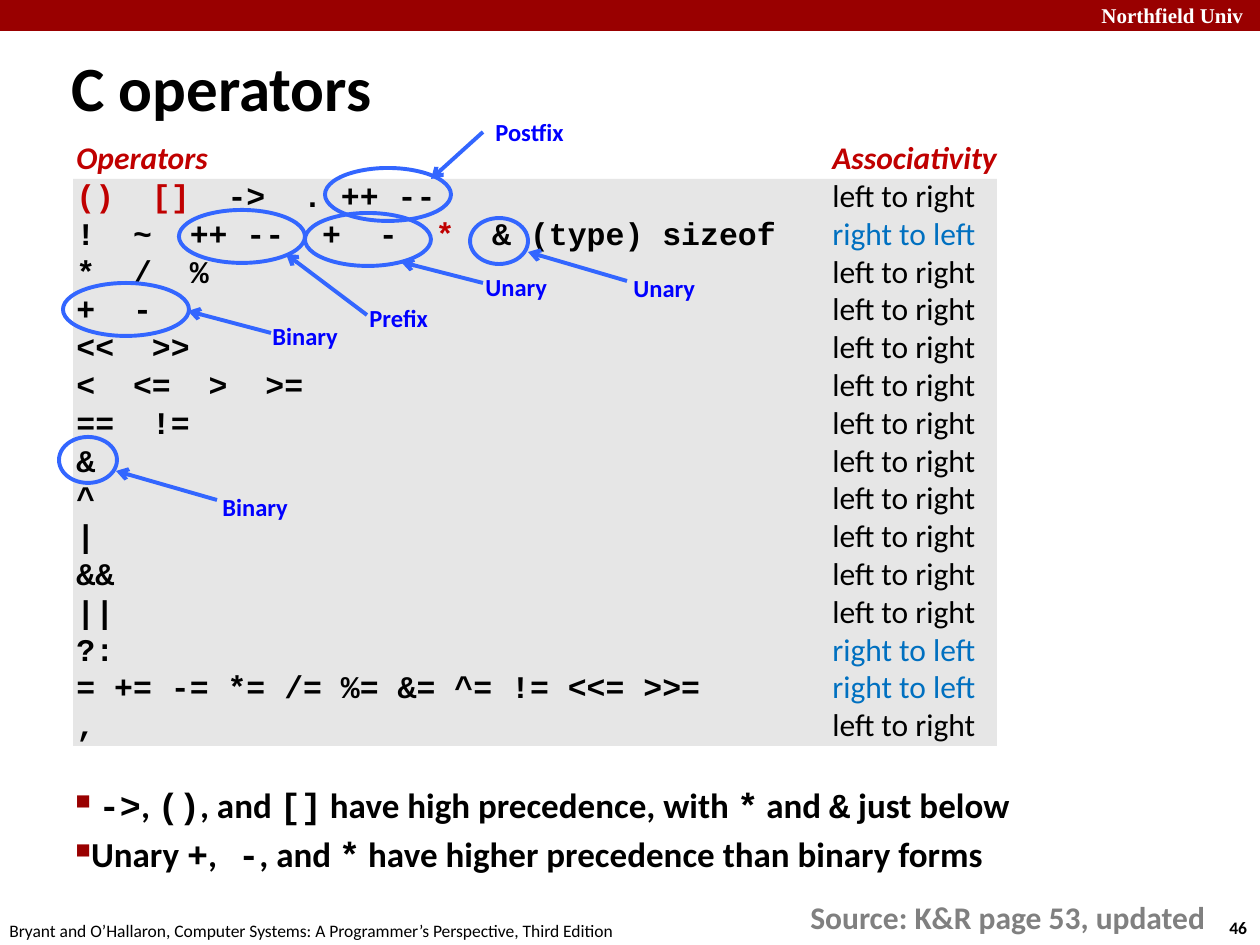
from lxml import etree
from pptx import Presentation
from pptx.dml.color import RGBColor
from pptx.enum.shapes import MSO_CONNECTOR as Connector, MSO_SHAPE as Shape
from pptx.enum.text import MSO_ANCHOR as Anchor
from pptx.oxml import parse_xml
from pptx.oxml.ns import nsdecls, qn
from pptx.util import Emu, Pt

PX = 914400 / 126  # EMU per pixel
SANS, MONO, SERIF = "Calibri", "Courier New", "Times New Roman"
COLORS = {
    "banner": "990000", "white": "FFFFFF", "black": "000000", "panel": "E6E6E6",
    "heading": "C00000", "right": "0070C0", "mark": "3366FF", "label": "0000FF",
    "source": "808080",
}
LEFT, RIGHT = "left to right", "right to left"
# Each operator row: (text, colour) pieces, then the associativity
OPERATORS = [
    ([("()  []  ", "heading"), ("->  . ++ --", "black")], LEFT),
    ([("!  ~  ++ --  +  -  ", "black"), ("*  ", "heading"),
      ("& (type) sizeof", "black")], RIGHT),
] + [([(text, "black")], direction) for text, direction in [
    ("*  /  %", LEFT), ("+  -", LEFT), ("<<  >>", LEFT), ("<  <=  >  >=", LEFT),
    ("==  !=", LEFT), ("&", LEFT), ("^", LEFT), ("|", LEFT), ("&&", LEFT),
    ("||", LEFT), ("?:", RIGHT), ("= += -= *= /= %= &= ^= != <<= >>=", RIGHT),
    (",", LEFT),
]]
# Pieces alternate between sans and monospaced
NOTES = [
    [" ", "->", ", ", "()", ", and ", "[]", " have high precedence, with ", "*",
     " and ", "&", " just below"],
    ["Unary ", "+", ",", " -", ", and ", "*",
     " have higher precedence than binary forms"],
]
ELLIPSES = [
    (325, 168, 126, 53), (179, 210, 126, 53), (305, 213, 126, 53),
    (63, 283, 126, 53), (470, 218, 58, 46), (59, 437, 58, 46),
]
# Label text, its box, and the arrow's start and end
CALLOUTS = [
    ("Postfix", (483, 111, 96, 43), (483, 132), (431, 179)),
    ("Unary", (473, 266, 89, 43), (483, 283), (401, 262)),
    ("Binary", (260, 315, 92, 43), (271, 333), (188, 311)),
    ("Prefix", (357, 297, 86, 43), (367, 315), (286, 254)),
    ("Unary", (621, 267, 89, 43), (627, 281), (528, 252)),
    ("Binary", (210, 486, 92, 43), (217, 500), (116, 471)),
]


def px(*values):
    return [Emu(round(value * PX)) for value in values]


def rgb(name):
    return RGBColor.from_string(COLORS[name])


def style_font(font, name, size, color, bold=False, italic=False):
    font.name, font.size = name, Pt(size)
    font.bold, font.italic = bold, italic
    font.color.rgb = rgb(color)


def add_frame(slide, box, wrap=True):
    frame = slide.shapes.add_textbox(*px(*box)).text_frame
    frame.word_wrap = wrap
    return frame


def add_text(slide, box, text, size, color="black", bold=True, name=SANS, wrap=False):
    frame = add_frame(slide, box, wrap)
    paragraph = frame.paragraphs[0]
    paragraph.text = text
    style_font(paragraph.font, name, size, color, bold)
    return frame


def add_run(paragraph, text, *style):
    run = paragraph.add_run()
    run.text = text
    style_font(run.font, *style)


def next_paragraph(frame, index):
    return frame.add_paragraph() if index else frame.paragraphs[0]


def add_rectangle(slide, box, color):
    shape = slide.shapes.add_shape(Shape.RECTANGLE, *px(*box))
    shape.shadow.inherit = False
    shape.fill.solid()
    shape.fill.fore_color.rgb = rgb(color)
    shape.line.fill.background()


def add_ellipse(slide, box):
    shape = slide.shapes.add_shape(Shape.OVAL, *px(*box))
    shape.shadow.inherit = False
    shape.fill.background()
    shape.line.color.rgb = rgb("mark")
    shape.line.width = Pt(2.25)


def add_arrow(slide, start, end):
    connector = slide.shapes.add_connector(Connector.STRAIGHT, *px(*start, *end))
    connector.line.color.rgb = rgb("mark")
    connector.line.width = Pt(2.25)
    etree.SubElement(connector.line._get_or_add_ln(), qn("a:tailEnd"), type="arrow")
    etree.SubElement(connector._element.spPr, qn("a:effectLst"))


def set_tab_stop(paragraph, position):
    paragraph._p.get_or_add_pPr().insert(0, parse_xml(
        f'<a:tabLst {nsdecls("a")}><a:tab pos="{position}" algn="l"/></a:tabLst>'))


def set_bullet(paragraph):
    properties = paragraph._p.get_or_add_pPr()
    properties.set("marL", str(Pt(5)))
    properties.set("indent", str(-Pt(19)))
    for xml in (f'<a:buClr {{}}><a:srgbClr val="{COLORS["banner"]}"/></a:buClr>',
                '<a:buSzPct {} val="60000"/>', '<a:buChar {} char="■"/>'):
        properties.append(parse_xml(xml.format(nsdecls("a"))))


def add_operator_list(slide):
    frame = add_frame(slide, (64, 132, 954, 624))
    for index, (pieces, direction) in enumerate([([], None)] + OPERATORS):
        paragraph = next_paragraph(frame, index)
        set_tab_stop(paragraph, px(756)[0])
        if direction is None:
            add_run(paragraph, "Operators\tAssociativity", SANS, 18, "heading", True, True)
            continue
        for text, color in pieces:
            add_run(paragraph, text, MONO, 18, color, True)
        color = "right" if direction == RIGHT else "black"
        add_run(paragraph, "\t" + direction, SANS, 18, color)


def add_notes_list(slide):
    frame = add_frame(slide, (63, 777, 987, 158))
    for index, pieces in enumerate(NOTES):
        paragraph = next_paragraph(frame, index)
        paragraph.space_before = Pt(4)
        set_bullet(paragraph)
        for position, text in enumerate(pieces):
            add_run(paragraph, text, MONO if position % 2 else SANS, 20, "black", True)


def main():
    presentation = Presentation()
    presentation.slide_width, presentation.slide_height = px(1260, 945)
    slide = presentation.slides.add_slide(presentation.slide_layouts[6])

    add_rectangle(slide, (0, 0, 1260, 31), "banner")
    add_text(slide, (1089, -4, 180, 38), "Northfield Univ", 12, "white", name=SERIF, wrap=True)
    add_text(slide, (1217, 911, 47, 34), "46", 10)
    add_text(slide, (-3, 914, 640, 34), "Bryant and O’Hallaron, Computer Systems: "
             "A Programmer’s Perspective, Third Edition", 10, bold=False)
    add_rectangle(slide, (73, 179, 924, 567), "panel")
    title = add_text(slide, (59, 47, 703, 79), "C operators", 36, wrap=True)
    title.vertical_anchor = Anchor.MIDDLE
    add_operator_list(slide)
    add_notes_list(slide)
    add_text(slide, (798, 892, 426, 50), "Source: K&R page 53, updated", 18, "source")

    for box in ELLIPSES:
        add_ellipse(slide, box)
    for text, box, start, end in CALLOUTS:
        add_text(slide, box, text, 14, "label")
        add_arrow(slide, start, end)
    presentation.save("out.pptx")


if __name__ == "__main__":
    main()
